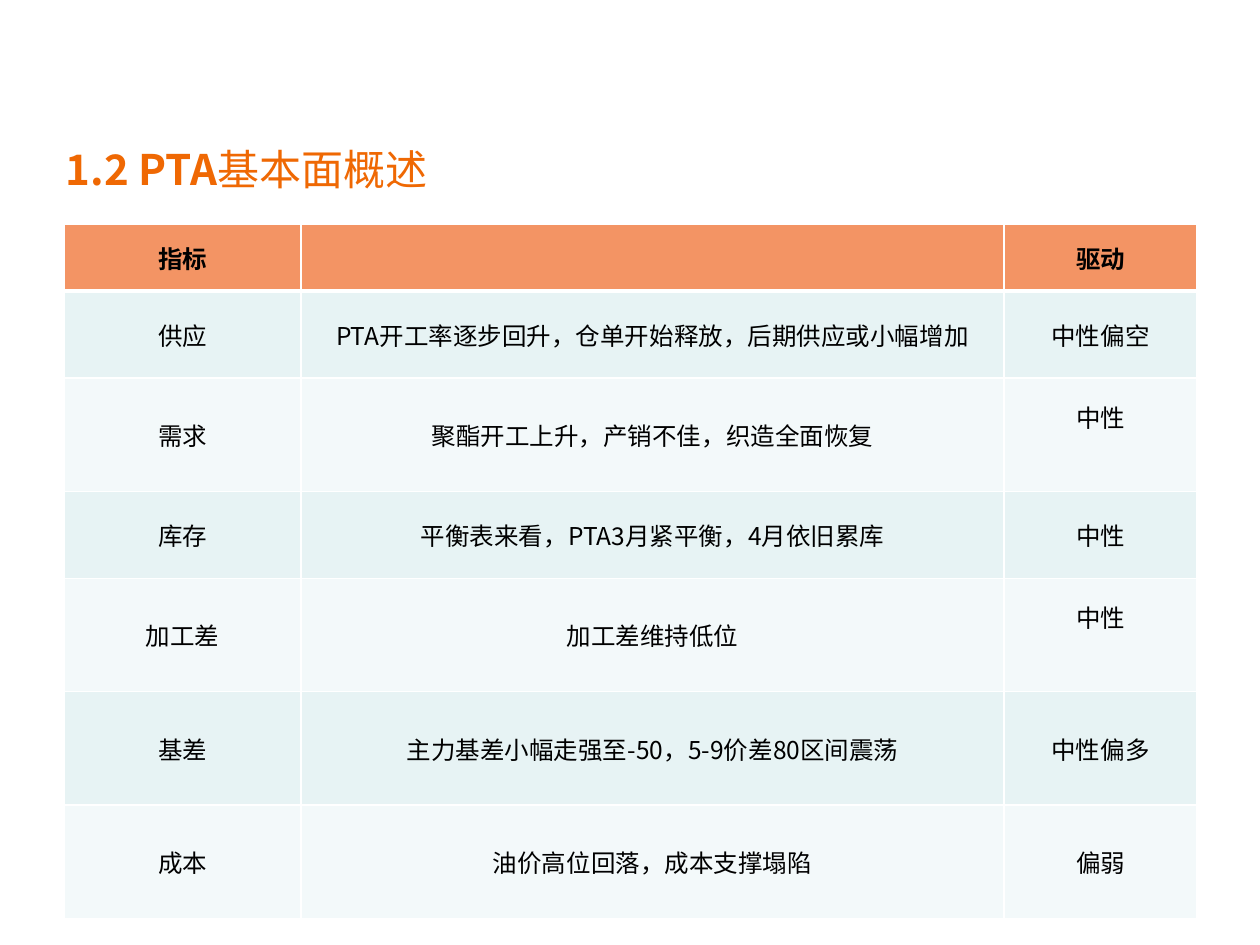
from lxml import etree
from pptx import Presentation
from pptx import util as u
from pptx.dml.color import RGBColor
from pptx.enum import text
from pptx.oxml import ns

FONT = "Noto Sans CJK SC"
ORANGE = RGBColor(0xEF, 0x68, 0x03)
HEADER = RGBColor(0xF3, 0x94, 0x64)
BANDS = [RGBColor(0xE7, 0xF3, 0xF4), RGBColor(0xF3, 0xF9, 0xFA)]
BLACK = RGBColor(0, 0, 0)
WHITE = RGBColor(0xFF, 0xFF, 0xFF)

COLUMNS = [1.88, 5.58, 1.53]
HEIGHTS = [0.53, 0.69, 0.9, 0.69, 0.9, 0.9, 0.9]
ROWS = [
    ("指标", "", "驱动"),
    ("供应", "PTA开工率逐步回升，仓单开始释放，后期供应或小幅增加", "中性偏空"),
    ("需求", "聚酯开工上升，产销不佳，织造全面恢复", "中性"),
    ("库存", "平衡表来看，PTA3月紧平衡，4月依旧累库", "中性"),
    ("加工差", "加工差维持低位", "中性"),
    ("基差", "主力基差小幅走强至-50，5-9价差80区间震荡", "中性偏多"),
    ("成本", "油价高位回落，成本支撑塌陷", "偏弱"),
]
RAISED_ROWS = (2, 4)  # the driver sits above the middle in these rows


def add_span(para, words, size=14, color=BLACK, bold=False):
    span = para.add_run()
    span.text = words
    font = span.font
    font.name, font.size, font.bold = FONT, u.Pt(size), bold
    font.color.rgb = color
    east_asian = etree.SubElement(font._element, ns.qn("a:ea"))
    east_asian.set("typeface", FONT)


def add_border(cell, side, width, color=WHITE):
    line = etree.SubElement(cell._tc.get_or_add_tcPr(), ns.qn(f"a:ln{side}"))
    line.set("w", str(u.Pt(width)))
    fill = etree.SubElement(line, ns.qn("a:solidFill"))
    etree.SubElement(fill, ns.qn("a:srgbClr")).set("val", str(color))


class Builder:
    def __init__(self, deck):
        self.page = deck.slides.add_slide(deck.slide_layouts[6])

    def title(self, left, top, width, height, spans):
        box = self.page.shapes.add_textbox(*map(u.Inches, (left, top, width, height)))
        frame = box.text_frame
        frame.word_wrap = True
        frame.vertical_anchor = text.MSO_ANCHOR.MIDDLE
        for words, bold in spans:
            add_span(frame.paragraphs[0], words, size=24, color=ORANGE, bold=bold)

    def table(self, left, top):
        size = (sum(COLUMNS), sum(HEIGHTS))
        table = self.page.shapes.add_table(
            len(ROWS), len(COLUMNS), *map(u.Inches, (left, top, *size))).table
        for column, width in zip(table.columns, COLUMNS):
            column.width = u.Inches(width)
        for r, words in enumerate(ROWS):
            table.rows[r].height = u.Inches(HEIGHTS[r])
            for c, word in enumerate(words):
                self.cell(table.cell(r, c), word, r)
        for r in RAISED_ROWS:
            table.cell(r, 2).margin_bottom = u.Inches(0.34)
        last_driver = table.cell(5, 2)
        last_driver.margin_left = last_driver.margin_right = 0
        last_driver.margin_top = last_driver.margin_bottom = 0

    def cell(self, cell, words, row):
        # The rule under the header is heavier than the others
        widths = {"L": 1, "R": 1, "T": 3 if row == 1 else 1, "B": 3 if row == 0 else 1}
        for side, width in widths.items():
            add_border(cell, side, width)
        cell.fill.solid()
        cell.fill.fore_color.rgb = BANDS[(row - 1) % 2] if row else HEADER
        cell.vertical_anchor = text.MSO_ANCHOR.MIDDLE
        para = cell.text_frame.paragraphs[0]
        para.alignment = text.PP_ALIGN.CENTER
        if words:
            add_span(para, words, bold=row == 0)


def main():
    deck = Presentation()
    deck.slide_width, deck.slide_height = u.Inches(10), u.Inches(7.5)
    builder = Builder(deck)
    # Heading
    builder.title(0.35, 0.89, 8.36, 0.89, [(" 1.2 PTA", True), ("基本面概述", False)])
    # Overview table
    builder.table(0.51, 1.78)
    deck.save("out.pptx")


if __name__ == "__main__":
    main()
